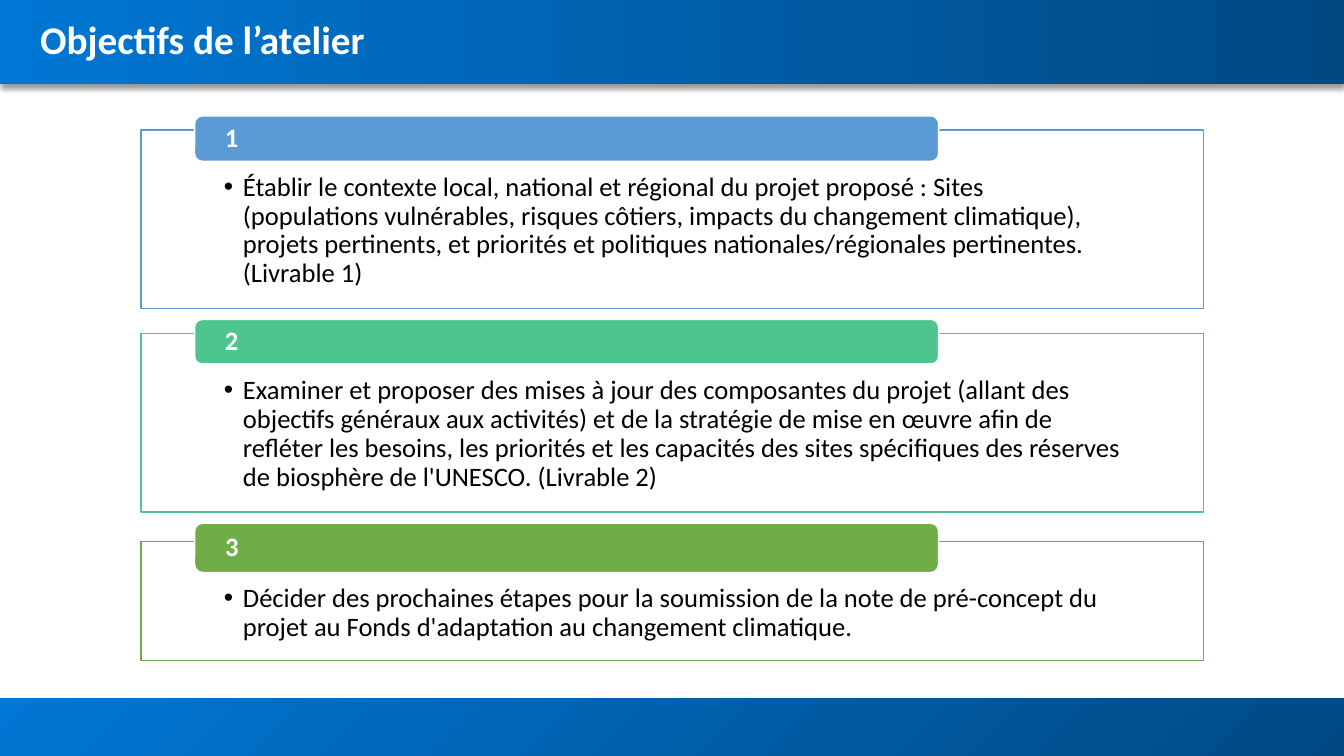
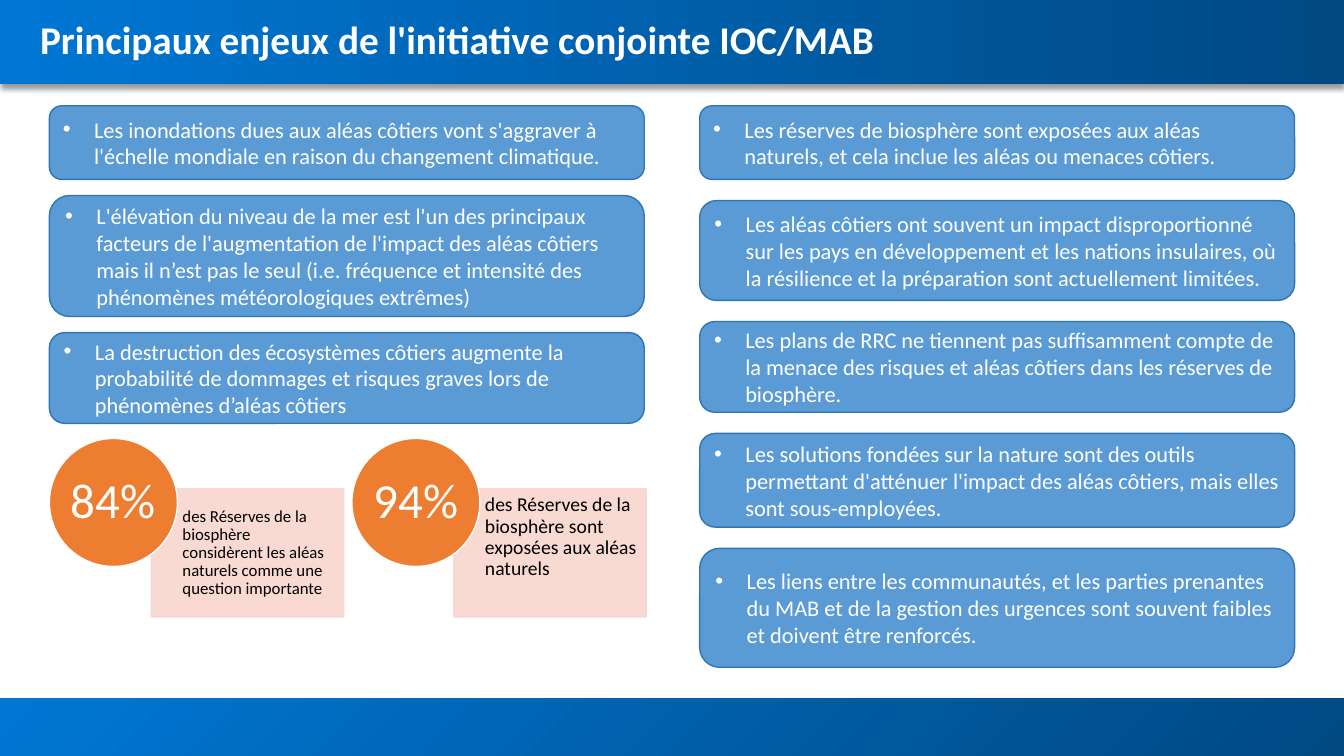
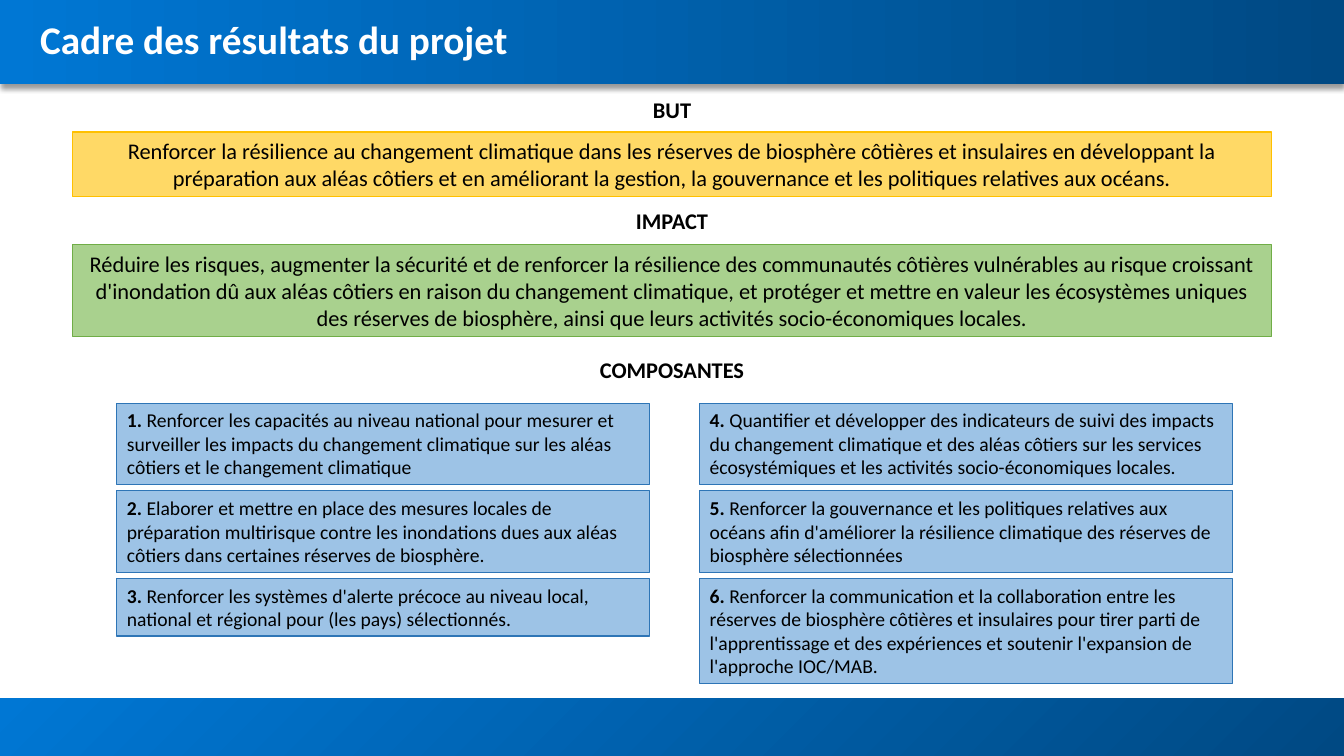
"""Build three workshop slides: objectives, key issues and results framework."""

import dataclasses
import typing

import lxml.etree
import pptx
import pptx.dml.color
import pptx.enum.shapes
import pptx.enum.text
import pptx.oxml.ns
import pptx.shapes.autoshape
import pptx.slide
import pptx.util

Inches = pptx.util.Inches
Pt = pptx.util.Pt
qn = pptx.oxml.ns.qn
Kind = pptx.enum.shapes.MSO_SHAPE
Anchor = pptx.enum.text.MSO_ANCHOR
Align = pptx.enum.text.PP_ALIGN

FONT = "Calibri"
WHITE, BLACK = "FFFFFF", "000000"
BRIGHT_BLUE, DEEP_BLUE = "0077D4", "004983"
BLUE, BLUE_EDGE, PALE_BLUE = "5B9BD5", "2E75B6", "9DC3E6"
TEAL, GREEN, PALE_GREEN = "4DC58D", "70AD47", "A9D18E"
GOLD, PALE_GOLD = "FFC000", "FFD966"
ORANGE, PINK = "ED7D31", "F8D7CE"
SLIDE_WIDTH, SLIDE_HEIGHT = 13.33, 7.5


class Box(typing.NamedTuple):
    """Position and size in inches."""

    left: float
    top: float
    width: float
    height: float


@dataclasses.dataclass(frozen=True)
class Style:
    """Look of a shape and of its text; without a kind it is a text box."""

    size: float
    color: str = BLACK
    bold: bool = False
    kind: typing.Optional[Kind] = None
    fill: str = WHITE
    line: str = WHITE
    line_width: float = 1
    opacity: int = 100
    align: Align = Align.LEFT
    anchor: Anchor = Anchor.TOP
    insets: tuple[float, float, float, float] = (0.1, 0.05, 0.1, 0.05)
    spacing: float = 1
    bullet_indent: float = 0


class Objective(typing.NamedTuple):
    """A numbered objective with its frame and header bar."""

    color: str
    frame_top: float
    frame_height: float
    bar_top: float
    bar_height: float
    text: str


class Statistic(typing.NamedTuple):
    """A percentage in a circle and the panel that explains it."""

    left: float
    value: str
    text: str
    size: float
    anchor: Anchor
    margin: float


class Entry(typing.NamedTuple):
    """A stacked text box of given height."""

    height: float
    text: str


class Goal(typing.NamedTuple):
    """A heading followed by its statement box."""

    heading: str
    heading_top: float
    top: float
    height: float
    text: str
    fill: str
    line: str


TITLE = Style(28, WHITE, bold=True)
HEADING = Style(16, bold=True, align=Align.CENTER)
FRAME = Style(19, kind=Kind.RECTANGLE, opacity=90, spacing=0.9,
              insets=(0.82, 0.43, 0.82, 0.15), bullet_indent=0.19)
BAR = Style(19, WHITE, bold=True, kind=Kind.ROUNDED_RECTANGLE,
            anchor=Anchor.MIDDLE, insets=(0.28, 0, 0.28, 0), spacing=0.9)
ISSUE = Style(16, WHITE, kind=Kind.ROUNDED_RECTANGLE, fill=BLUE, line=BLUE_EDGE,
              anchor=Anchor.MIDDLE, bullet_indent=0.31)
PANEL = Style(12, kind=Kind.RECTANGLE, fill=PINK, line=PINK, opacity=90, spacing=0.9)
CIRCLE = Style(35, WHITE, kind=Kind.OVAL, fill=ORANGE, align=Align.CENTER,
               anchor=Anchor.MIDDLE, insets=(0, 0, 0, 0), spacing=0.9)
STATEMENT = Style(16, kind=Kind.RECTANGLE, line_width=0.75, align=Align.CENTER)
COMPONENT = Style(14, kind=Kind.RECTANGLE, fill=PALE_BLUE, line=BLUE_EDGE, line_width=0.75)

OBJECTIVES = [
    Objective(BLUE, 1.29, 1.77, 1.15, 0.45,
              "Établir le contexte local, national et régional du projet proposé : Sites "
              "(populations vulnérables, risques côtiers, impacts du changement climatique), "
              "projets pertinents, et priorités et politiques nationales/régionales "
              "pertinentes. (Livrable 1)"),
    Objective(TEAL, 3.31, 1.77, 3.17, 0.44,
              "Examiner et proposer des mises à jour des composantes du projet (allant des "
              "objectifs généraux aux activités) et de la stratégie de mise en œuvre afin de "
              "refléter les besoins, les priorités et les capacités des sites spécifiques des "
              "réserves de biosphère de l'UNESCO. (Livrable 2)"),
    Objective(GREEN, 5.37, 1.18, 5.19, 0.49,
              "Décider des prochaines étapes pour la soumission de la note de pré-concept du "
              "projet au Fonds d'adaptation au changement climatique."),
]

HAZARDS = [
    Entry(0.73, "Les inondations dues aux aléas côtiers vont s'aggraver à l'échelle mondiale "
                "en raison du changement climatique."),
    Entry(1.2, "L'élévation du niveau de la mer est l'un des principaux facteurs de "
               "l'augmentation de l'impact des aléas côtiers mais il n’est pas le seul (i.e. "
               "fréquence et intensité des phénomènes météorologiques extrêmes)"),
    Entry(0.9, "La destruction des écosystèmes côtiers augmente la probabilité de dommages et "
               "risques graves lors de phénomènes d’aléas côtiers"),
]
RESERVES = [
    Entry(0.73, "Les réserves de biosphère sont exposées aux aléas naturels, et cela inclue "
                "les aléas ou menaces côtiers."),
    Entry(0.99, "Les aléas côtiers ont souvent un impact disproportionné sur les pays en "
                "développement et les nations insulaires, où la résilience et la préparation "
                "sont actuellement limitées."),
    Entry(0.9, "Les plans de RRC ne tiennent pas suffisamment compte de la menace des risques "
               "et aléas côtiers dans les réserves de biosphère."),
    Entry(0.93, "Les solutions fondées sur la nature sont des outils permettant d'atténuer "
                "l'impact des aléas côtiers, mais elles sont sous-employées."),
    Entry(1.18, "Les liens entre les communautés, et les parties prenantes du MAB et de la "
                "gestion des urgences sont souvent faibles et doivent être renforcés."),
]
STATISTICS = [
    Statistic(0.49, "84%", "des Réserves de la biosphère considèrent les aléas naturels comme "
                           "une question importante", 12, Anchor.MIDDLE, 0.09),
    Statistic(3.49, "94%", "des Réserves de la biosphère sont exposées aux aléas naturels",
              14, Anchor.TOP, 0.06),
]

GOALS = [
    Goal("BUT", 0.9, 1.31, 0.64,
         "Renforcer la résilience au changement climatique dans les réserves de biosphère "
         "côtières et insulaires en développant la préparation aux aléas côtiers et en "
         "améliorant la gestion, la gouvernance et les politiques relatives aux océans.",
         PALE_GOLD, GOLD),
    Goal("IMPACT", 2.01, 2.43, 0.91,
         "Réduire les risques, augmenter la sécurité et de renforcer la résilience des "
         "communautés côtières vulnérables au risque croissant d'inondation dû aux aléas "
         "côtiers en raison du changement climatique, et protéger et mettre en valeur les "
         "écosystèmes uniques des réserves de biosphère, ainsi que leurs activités "
         "socio-économiques locales.", PALE_GREEN, GREEN),
]
COMPONENTS = [
    Entry(0.81, "Renforcer les capacités au niveau national pour mesurer et surveiller les "
                "impacts du changement climatique sur les aléas côtiers et le changement "
                "climatique"),
    Entry(0.81, "Elaborer et mettre en place des mesures locales de préparation multirisque "
                "contre les inondations dues aux aléas côtiers dans certaines réserves de "
                "biosphère."),
    Entry(0.57, "Renforcer les systèmes d'alerte précoce au niveau local, national et régional "
                "pour (les pays) sélectionnés."),
    Entry(0.81, "Quantifier et développer des indicateurs de suivi des impacts du changement "
                "climatique et des aléas côtiers sur les services écosystémiques et les "
                "activités socio-économiques locales."),
    Entry(0.81, "Renforcer la gouvernance et les politiques relatives aux océans afin "
                "d'améliorer la résilience climatique des réserves de biosphère sélectionnées"),
    Entry(1.04, "Renforcer la communication et la collaboration entre les réserves de "
                "biosphère côtières et insulaires pour tirer parti de l'apprentissage et des "
                "expériences et soutenir l'expansion de l'approche IOC/MAB."),
]


def rgb(value: str) -> pptx.dml.color.RGBColor:
    """Turn a hex string into a colour."""
    return pptx.dml.color.RGBColor.from_string(value)


def set_attributes(target: typing.Any, values: dict[str, typing.Any]) -> None:
    """Set each named attribute on the target."""
    for name, value in values.items():
        setattr(target, name, value)


def add_xml(parent: typing.Any, tag: str, **attributes: str) -> typing.Any:
    """Append a DrawingML element."""
    return lxml.etree.SubElement(parent, qn(tag), attributes)


def add_shape(slide: pptx.slide.Slide, kind: Kind, box: Box) -> pptx.shapes.autoshape.Shape:
    """Add a preset shape without a shadow."""
    shape = slide.shapes.add_shape(kind, *map(Inches, box))
    shape.shadow.inherit = False
    return shape


def paint(shape: pptx.shapes.autoshape.Shape, style: Style) -> None:
    """Apply fill, line and opacity."""
    shape.fill.solid()
    shape.fill.fore_color.rgb = rgb(style.fill)
    shape.line.color.rgb = rgb(style.line)
    shape.line.width = Pt(style.line_width)
    if style.opacity < 100:
        for color in shape.element.spPr.iter(qn("a:srgbClr")):
            if color.get("val") == style.fill:
                add_xml(color, "a:alpha", val=str(style.opacity * 1000))


def draw_text(slide: pptx.slide.Slide, box: Box, text: str, style: Style,
              label: str = "") -> None:
    """Draw a shape or text box whose text may start with a bold label."""
    if style.kind is None:
        shape = slide.shapes.add_textbox(*map(Inches, box))
    else:
        shape = add_shape(slide, style.kind, box)
        paint(shape, style)
    sides = ("margin_left", "margin_top", "margin_right", "margin_bottom")
    frame_format = {"word_wrap": True, "vertical_anchor": style.anchor}
    frame_format.update(zip(sides, map(Inches, style.insets)))
    set_attributes(shape.text_frame, frame_format)
    paragraph = shape.text_frame.paragraphs[0]
    set_attributes(paragraph, {"alignment": style.align, "line_spacing": style.spacing})
    if style.bullet_indent:
        properties = paragraph._p.get_or_add_pPr()
        indent = Inches(style.bullet_indent)
        properties.set("marL", str(indent))
        properties.set("indent", str(-indent))
        add_xml(properties, "a:buFont", typeface="Arial")
        add_xml(properties, "a:buChar", char="•")
    for content, bold in ((label, True), (text, style.bold)):
        if content:
            run = paragraph.add_run()
            run.text = content
            set_attributes(run.font, {"name": FONT, "size": Pt(style.size), "bold": bold})
            run.font.color.rgb = rgb(style.color)


def draw_band(slide: pptx.slide.Slide, box: Box, colors: tuple[str, str],
              angle: float) -> pptx.shapes.autoshape.Shape:
    """Draw a full-width gradient band."""
    band = add_shape(slide, Kind.RECTANGLE, box)
    band.line.fill.background()
    band.fill.gradient()
    band.fill.gradient_angle = angle
    for stop, color in zip(band.fill.gradient_stops, colors):
        stop.color.rgb = rgb(color)
    return band


def add_slide(presentation: typing.Any, title: str) -> pptx.slide.Slide:
    """Add a blank slide with the shared bands and title."""
    slide = presentation.slides.add_slide(presentation.slide_layouts[6])
    draw_band(slide, Box(0, 6.93, SLIDE_WIDTH, 0.57), (DEEP_BLUE, BRIGHT_BLUE), 135)
    header = draw_band(slide, Box(0, 0, SLIDE_WIDTH, 0.83), (BRIGHT_BLUE, DEEP_BLUE), 0)
    effects = header.element.spPr.find(qn("a:effectLst"))
    shadow = add_xml(effects, "a:outerShdw", blurRad=str(Pt(4)), dist=str(Pt(3)),
                     dir="5400000", algn="t", rotWithShape="0")
    add_xml(add_xml(shadow, "a:srgbClr", val=BLACK), "a:alpha", val="40000")
    draw_text(slide, Box(0.3, 0.1, 9.86, 0.57), title, TITLE)
    return slide


def draw_stack(slide: pptx.slide.Slide, start: Box, gap: float, entries: list[Entry],
               style: Style, first_number: int = 0) -> None:
    """Stack entries downwards with equal gaps, numbered if a first number is given."""
    top = start.top
    for index, entry in enumerate(entries):
        label = f"{first_number + index}. " if first_number else ""
        box = start._replace(top=top, height=entry.height)
        draw_text(slide, box, entry.text, style, label)
        top += entry.height + gap


def build_objectives(presentation: typing.Any) -> None:
    """Build the workshop objectives slide."""
    slide = add_slide(presentation, "Objectifs de l’atelier")
    for number, item in enumerate(OBJECTIVES, 1):
        draw_text(slide, Box(1.4, item.frame_top, 10.54, item.frame_height), item.text,
                  dataclasses.replace(FRAME, line=item.color))
        draw_text(slide, Box(1.93, item.bar_top, 7.38, item.bar_height), str(number),
                  dataclasses.replace(BAR, fill=item.color))


def build_issues(presentation: typing.Any) -> None:
    """Build the key issues slide."""
    slide = add_slide(presentation, "Principaux enjeux de l'initiative conjointe IOC/MAB")
    draw_stack(slide, Box(0.49, 1.05, 5.9, 0), 0.16, HAZARDS, ISSUE)
    draw_stack(slide, Box(6.94, 1.05, 5.9, 0), 0.21, RESERVES, ISSUE)
    for item in STATISTICS:
        panel = dataclasses.replace(PANEL, size=item.size, anchor=item.anchor,
                                    insets=(0.31, item.margin, 0.09, item.margin))
        draw_text(slide, Box(item.left + 1.01, 4.85, 1.91, 1.27), item.text, panel)
        draw_text(slide, Box(item.left, 4.35, 1.27, 1.27), item.value, CIRCLE)


def build_results(presentation: typing.Any) -> None:
    """Build the results framework slide."""
    slide = add_slide(presentation, "Cadre des résultats du projet")
    heading_box = Box(3.97, 3.48, 5.39, 0.37)
    for goal in GOALS:
        draw_text(slide, heading_box._replace(top=goal.heading_top), goal.heading, HEADING)
        draw_text(slide, Box(0.72, goal.top, 11.89, goal.height), goal.text,
                  dataclasses.replace(STATEMENT, fill=goal.fill, line=goal.line))
    draw_text(slide, heading_box, "COMPOSANTES", HEADING)
    half = len(COMPONENTS) // 2
    for left, first in ((1.16, 0), (6.94, half)):
        draw_stack(slide, Box(left, 4, 5.28, 0), 0.06, COMPONENTS[first:first + half],
                   COMPONENT, first + 1)


def main() -> None:
    """Build and save the presentation."""
    presentation = pptx.Presentation()
    presentation.slide_width = Inches(SLIDE_WIDTH)
    presentation.slide_height = Inches(SLIDE_HEIGHT)
    for build in (build_objectives, build_issues, build_results):
        build(presentation)
    presentation.save("out.pptx")


if __name__ == "__main__":
    main()
